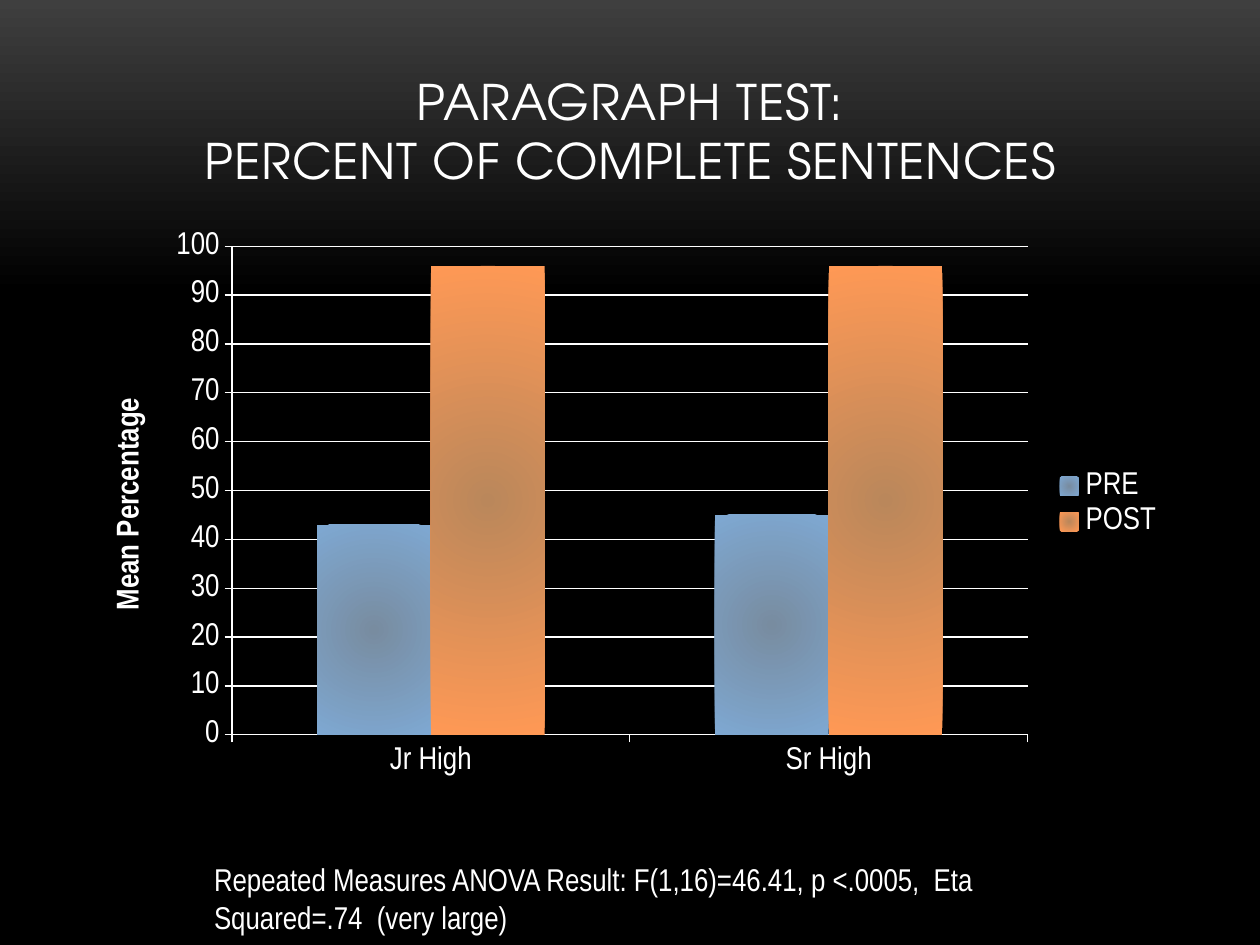
from dataclasses import dataclass

from lxml import etree
from pptx import Presentation
from pptx import util as u
from pptx.chart.data import CategoryChartData
from pptx.dml.color import RGBColor
from pptx.enum import chart as ch, text
from pptx.oxml import ns


@dataclass(frozen=True)
class Theme:
    white: str = "FFFFFF"
    back: tuple = ((0, "3F3F3F"), (0.31, "000000"))
    bars: tuple = (("788CA0", "7EA8D2"), ("BA875B", "FF9955"))
    head: str = "TeX Gyre Adventor"
    body: str = "Arial Narrow"
    big: int = 28
    small: int = 18


def put(item, **values):
    for name, value in values.items():
        setattr(item, name, value)


def box(*sizes):
    return [u.Inches(size) for size in sizes]


class Deck:
    def __init__(self, theme):
        self.theme = theme
        self.file = Presentation()
        put(self.file, slide_width=u.Inches(10), slide_height=u.Inches(7.5))
        self.slide = self.file.slides.add_slide(self.file.slide_layouts[5])

    def font(self, font, name, size, **more):
        put(font, name=name, size=u.Pt(size), **more)
        font.color.rgb = RGBColor.from_string(self.theme.white)

    def blend(self, fill, stops):
        fill.gradient()
        for stop, (place, color) in zip(fill.gradient_stops, stops):
            stop.position = place
            stop.color.rgb = RGBColor.from_string(color)

    def back(self):
        fill = self.slide.background.fill
        self.blend(fill, self.theme.back)
        fill.gradient_angle = 270

    def title(self, lines, area):
        shape = self.slide.shapes.title
        put(shape, **dict(zip(("left", "top", "width", "height"), box(*area))))
        put(shape.text_frame, vertical_anchor=text.MSO_ANCHOR.BOTTOM,
            auto_size=text.MSO_AUTO_SIZE.NONE, word_wrap=True)
        para = shape.text_frame.paragraphs[0]
        para.alignment = text.PP_ALIGN.CENTER
        for spot, line in enumerate(lines):
            if spot:
                para.add_line_break()
            run = para.add_run()
            run.text = line
            self.font(run.font, self.theme.head, self.theme.big)
            run._r.get_or_add_rPr().set("spc", "50")

    def note(self, words, area):
        frame = self.slide.shapes.add_textbox(*box(*area)).text_frame
        put(frame, word_wrap=True, auto_size=text.MSO_AUTO_SIZE.SHAPE_TO_FIT_TEXT)
        run = frame.paragraphs[0].add_run()
        run.text = words
        self.font(run.font, self.theme.body, self.theme.small)

    def glow(self, series, inner, outer):
        self.blend(series.format.fill, ((0, inner), (1, outer)))
        grad = series._element.find(".//" + ns.qn("a:gradFill"))
        for line in grad.findall(ns.qn("a:lin")):
            grad.remove(line)
        ring = etree.SubElement(grad, ns.qn("a:path"), path="circle")
        sides = dict.fromkeys("ltrb", "50000")
        etree.SubElement(ring, ns.qn("a:fillToRect"), sides)

    def line(self, form):
        form.line.color.rgb = RGBColor.from_string(self.theme.white)
        form.line.width = u.Pt(0.75)

    def chart(self, cats, rows, label, area):
        data = CategoryChartData()
        data.categories = cats
        for name, vals in rows.items():
            data.add_series(name, vals)
        kind = ch.XL_CHART_TYPE.COLUMN_CLUSTERED
        chart = self.slide.shapes.add_chart(kind, *box(*area), data).chart
        put(chart, has_title=False, has_legend=True)
        self.font(chart.font, self.theme.body, self.theme.small)
        put(chart.legend, position=ch.XL_LEGEND_POSITION.RIGHT, include_in_layout=False)
        plot = chart.plots[0]
        put(plot, gap_width=150, overlap=0, vary_by_categories=False)
        for series, pair in zip(plot.series, self.theme.bars):
            self.glow(series, *pair)
        for axis in (chart.category_axis, chart.value_axis):
            put(axis, major_tick_mark=ch.XL_TICK_MARK.OUTSIDE,
                minor_tick_mark=ch.XL_TICK_MARK.NONE)
            self.line(axis.format)
        axis = chart.value_axis
        put(axis, minimum_scale=0, maximum_scale=100, major_unit=10,
            has_major_gridlines=True)
        self.line(axis.major_gridlines.format)
        frame = axis.axis_title.text_frame
        frame.text = label
        self.font(frame.paragraphs[0].runs[0].font, self.theme.body,
                  self.theme.small, bold=True)


def main():
    deck = Deck(Theme())
    deck.back()
    deck.title(("PARAGRAPH TEST:", "PERCENT OF COMPLETE SENTENCES"),
               (0.67, 0.3, 8.67, 1.25))
    deck.chart(("Jr High", "Sr High"), {"PRE": (43, 45), "POST": (96, 96)},
               "Mean Percentage", (0.67, 1.75, 8.67, 4.5))
    deck.note("Repeated Measures ANOVA Result: F(1,16)=46.41, p <.0005,  "
              "Eta Squared=.74  (very large)", (1.6, 6.78, 7.01, 0.71))
    deck.file.save("out.pptx")


if __name__ == "__main__":
    main()
